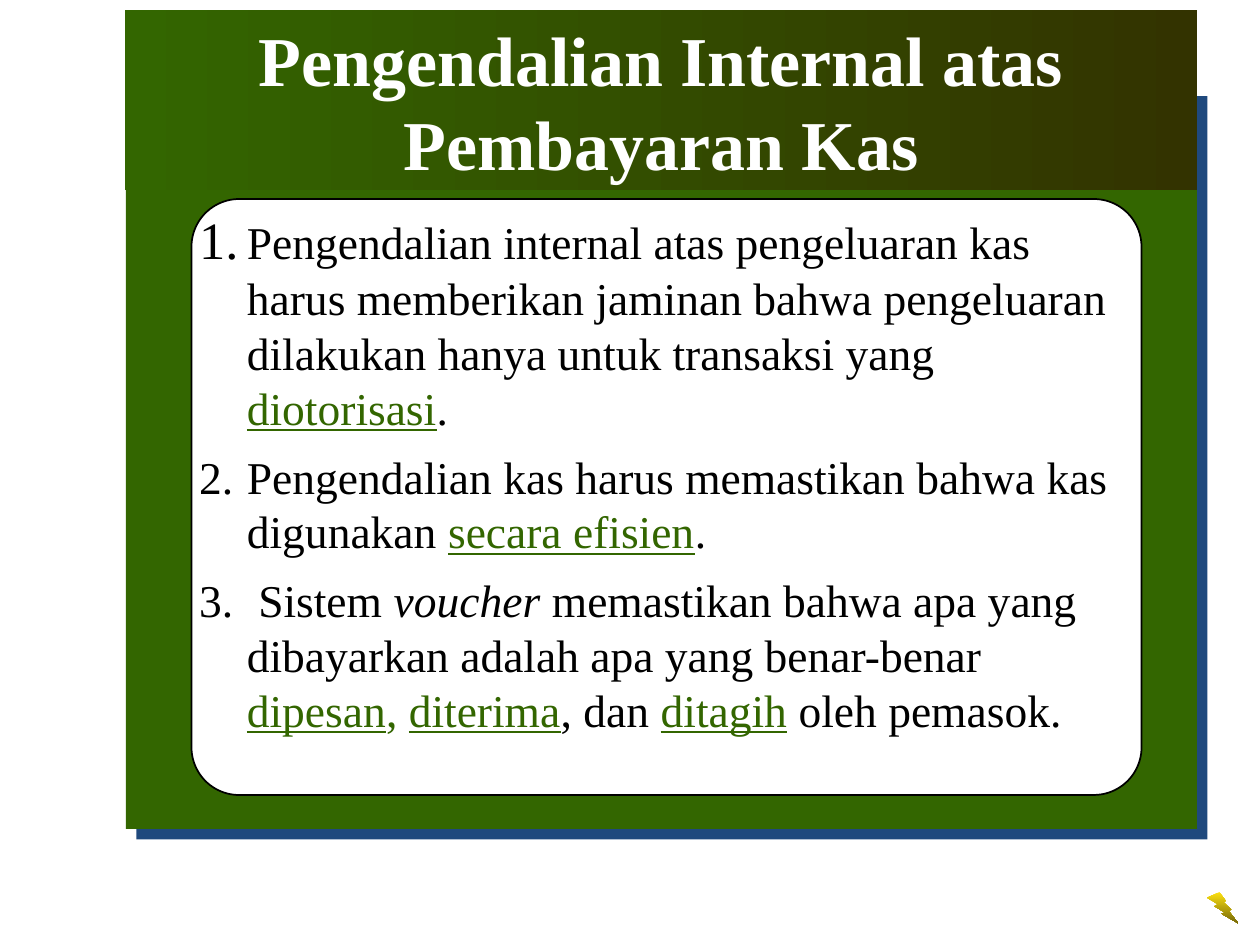
from lxml.etree import SubElement
from pptx import Presentation
from pptx.dml.color import RGBColor
from pptx.enum.shapes import MSO_SHAPE
from pptx.enum.text import MSO_ANCHOR, MSO_AUTO_SIZE, PP_ALIGN
from pptx.oxml.ns import qn
from pptx.util import Inches, Pt

GREEN = RGBColor(0x33, 0x66, 0x00)
OLIVE = RGBColor(0x33, 0x33, 0x00)
YELLOW = RGBColor(0xFD, 0xE1, 0x11)
BRONZE = RGBColor(0x75, 0x68, 0x08)
BLACK = RGBColor(0, 0, 0)
WHITE = RGBColor(0xFF, 0xFF, 0xFF)
SHADOW_HEX = "1F497D"

PLAIN = {"size": Pt(26)}
LARGE = {"size": Pt(30)}
ITALIC = {**PLAIN, "italic": True}
ACCENT = {**PLAIN, "color": GREEN}
KEYWORD = {**ACCENT, "underline": True}
TITLE = {"size": Pt(40), "bold": True, "color": WHITE}

CONTROLS = [
    [("1.\t", LARGE),
     ("Pengendalian internal atas pengeluaran kas harus memberikan jaminan "
      "bahwa pengeluaran dilakukan hanya untuk transaksi yang ", PLAIN),
     ("diotorisasi", KEYWORD), (".", PLAIN)],
    [("2.\tPengendalian kas harus memastikan bahwa kas digunakan ", PLAIN),
     ("secara efisien", KEYWORD), (".", PLAIN)],
    [("3.\t Sistem ", PLAIN), ("voucher", ITALIC),
     (" memastikan bahwa apa yang dibayarkan adalah apa yang benar-benar ", PLAIN),
     ("dipesan", KEYWORD), (", ", ACCENT), ("diterima", KEYWORD),
     (", dan ", PLAIN), ("ditagih", KEYWORD), (" oleh pemasok.", PLAIN)],
]


class SlideBuilder:
    font_name = "Times New Roman"
    hanging = Inches(0.38)

    def __init__(self, slide):
        self.slide = slide

    def shape(self, kind, left, top, width, height, fill=None, line=None):
        shape = self.slide.shapes.add_shape(
            kind, Inches(left), Inches(top), Inches(width), Inches(height))
        shape.shadow.inherit = False
        if fill is not None:
            shape.fill.solid()
            shape.fill.fore_color.rgb = fill
        if line is None:
            shape.line.fill.background()
        else:
            shape.line.color.rgb = line
            shape.line.width = Pt(1)
        return shape

    def gradient(self, shape, colors, angle):
        """Fill with two colours; the angle runs counter-clockwise."""
        shape.fill.gradient()
        shape.fill.gradient_angle = angle
        for stop, color in zip(shape.fill.gradient_stops, colors):
            stop.color.rgb = color

    def hard_shadow(self, shape):
        effects = shape._element.spPr.find(qn("a:effectLst"))
        shadow = SubElement(effects, qn("a:outerShdw"), blurRad="0",
                            dist=str(Pt(8.5)), dir=str(45 * 60000),
                            algn="ctr", rotWithShape="0")
        SubElement(shadow, qn("a:srgbClr"), val=SHADOW_HEX)

    def frame(self, shape, margins, anchor):
        frame = shape.text_frame
        horizontal, vertical = (Inches(margin) for margin in margins)
        settings = {"word_wrap": True, "vertical_anchor": anchor,
                    "auto_size": MSO_AUTO_SIZE.SHAPE_TO_FIT_TEXT,
                    "margin_left": horizontal, "margin_right": horizontal,
                    "margin_top": vertical, "margin_bottom": vertical}
        for name, value in settings.items():
            setattr(frame, name, value)
        return frame

    def spans(self, para, spans):
        for text, style in spans:
            span = para.add_run()
            span.text = text
            values = {"name": self.font_name, "color": BLACK, **style}
            span.font.color.rgb = values.pop("color")
            for name, value in values.items():
                setattr(span.font, name, value)

    def title(self, shape, text):
        frame = self.frame(shape, (0.1, 0.05), MSO_ANCHOR.TOP)
        para = frame.paragraphs[0]
        para.alignment = PP_ALIGN.CENTER
        self.spans(para, [(text, TITLE)])

    def numbered_list(self, left, top, width, height, items):
        box = self.slide.shapes.add_textbox(
            Inches(left), Inches(top), Inches(width), Inches(height))
        frame = self.frame(box, (0.2, 0.1), MSO_ANCHOR.MIDDLE)
        for index, item in enumerate(items):
            para = frame.add_paragraph() if index else frame.paragraphs[0]
            para.space_before = Pt(8.3)
            properties = para._p.get_or_add_pPr()
            properties.set("marL", str(self.hanging))
            properties.set("indent", str(-self.hanging))
            self.spans(para, item)


def main():
    deck = Presentation()
    deck.slide_width, deck.slide_height = Inches(10), Inches(7.5)
    page = SlideBuilder(deck.slides.add_slide(deck.slide_layouts[6]))

    panel = page.shape(MSO_SHAPE.RECTANGLE, 1, 0.68, 8.5, 5.9, GREEN)
    page.hard_shadow(panel)
    card = page.shape(MSO_SHAPE.ROUNDED_RECTANGLE, 1.52, 1.58, 7.54, 4.73, WHITE, BLACK)
    card.adjustments[0] = 0.08
    page.numbered_list(1.38, 1.53, 7.77, 4.43, CONTROLS)

    banner = page.shape(MSO_SHAPE.RECTANGLE, 0.99, 0.08, 8.51, 1.43)
    page.gradient(banner, (GREEN, OLIVE), 0)
    page.title(banner, "Pengendalian Internal atas Pembayaran Kas")

    bolt = page.shape(MSO_SHAPE.LIGHTNING_BOLT, 9.58, 7.08, 0.25, 0.25)
    page.gradient(bolt, (YELLOW, BRONZE), 270)

    deck.save("out.pptx")


if __name__ == "__main__":
    main()
